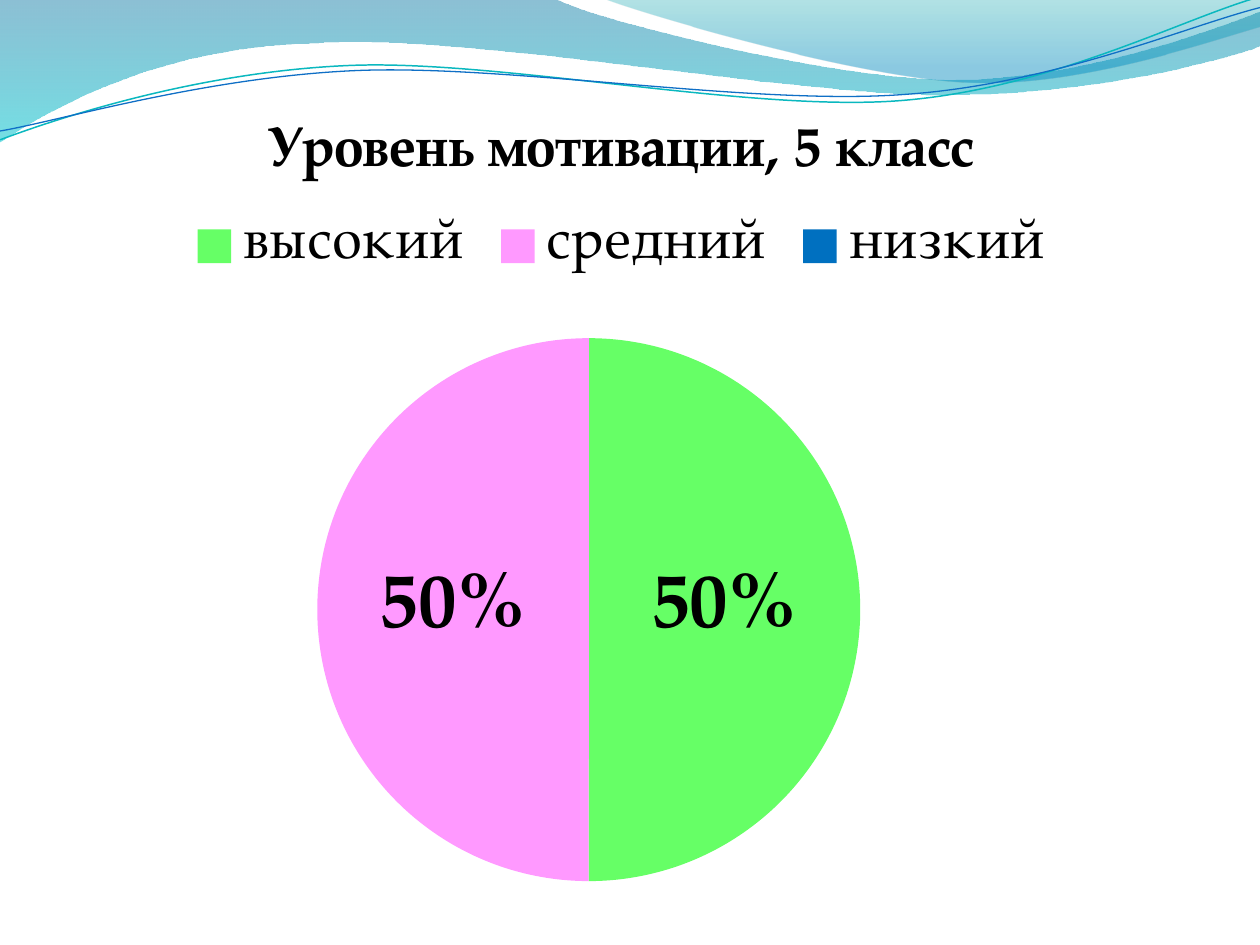
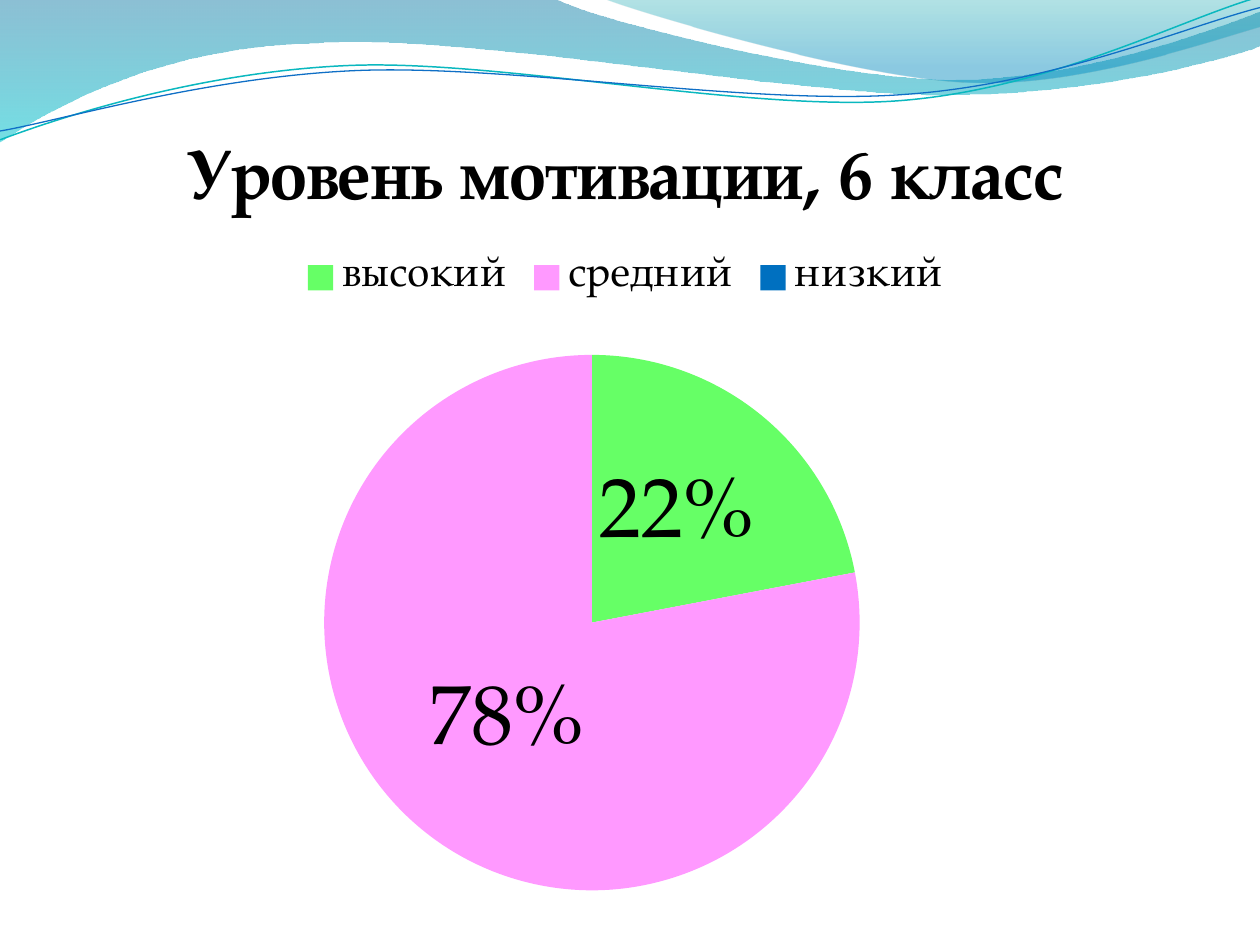
import math

from lxml import etree
from pptx import Presentation
from pptx import util as u
from pptx.chart.data import CategoryChartData
from pptx.dml.color import RGBColor
from pptx.enum import chart as ch
from pptx.oxml.ns import qn

COLUMNS, ROWS = 10, 7.5
CELL = u.Inches(1)
FONT = "TeX Gyre Pagella"
BLACK = RGBColor(0x00, 0x00, 0x00)
GREEN = RGBColor(0x66, 0xFF, 0x66)
PINK = RGBColor(0xFF, 0x99, 0xFF)
BLUE = RGBColor(0x00, 0x70, 0xC0)
LEVELS = {"высокий": GREEN, "средний": PINK, "низкий": BLUE}
PLOT_AREA = {"x": 0.032, "y": 0.306, "w": 0.879, "h": 0.658}
TILT = -2.7
TILT_CENTRE = (4.99, 0.58)

# Bands: steps (one point: straight, three points: cubic curve), then
# gradient stops (position, colour, opacity in percent).
BANDS = [
    ([(0, 0), (4.4, -0.01),
      (4.76, 0.17, 6.64, 0.63, 7.58, 0.63), (8.53, 0.63, 9.58, 0.26, 10, 0.09),
      (10.01, 0.36),
      (9.83, 0.44, 8.7, 0.76, 7.46, 0.75), (6.22, 0.75, 3.82, 0.28, 2.57, 0.34),
      (1.29, 0.36, 0.46, 0.83, -0.01, 1.13), (0, 0)],
     [(0, RGBColor(0x00, 0x74, 0xA1), 45), (1, RGBColor(0x00, 0xC6, 0xCF), 55)]),
    ([(4.79, -0.01),
      (5.09, 0.11, 6.82, 0.62, 7.69, 0.65), (8.56, 0.69, 9.61, 0.32, 10, 0.21),
      (10, 0), (4.79, -0.01)],
     [(0, RGBColor(0x00, 0xA1, 0xA9), 30), (0.8, RGBColor(0x00, 0x8B, 0xBF), 45)]),
]
# Lines: steps, colour, width.
WAVE_LINES = [
    ([(0, 1.11), (0.48, 0.93, 1.58, 0.57, 2.77, 0.52),
      (3.95, 0.47, 5.93, 0.89, 7.13, 0.8), (8.33, 0.71, 9.38, 0.15, 9.98, -0.02)],
     RGBColor(0x0A, 0xB8, 0xBF), 0.85),
    ([(0, 1.04), (0.47, 0.96, 1.64, 0.61, 2.83, 0.56),
      (4.03, 0.51, 5.97, 0.84, 7.17, 0.75), (8.36, 0.67, 9.41, 0.21, 10, 0.06)],
     RGBColor(0x0F, 0x6F, 0xC6), 0.75),
]


def cells(number):
    return round(number * CELL)


def pairs(step):
    return list(zip(step[::2], step[1::2]))


def level(step):
    """Turn a step's points back by the tilt, about its centre."""
    sine, cosine = math.sin(math.radians(-TILT)), math.cos(math.radians(-TILT))
    middle_x, middle_y = TILT_CENTRE
    turned = []
    for x, y in pairs(step):
        dx, dy = x - middle_x, y - middle_y
        turned += [middle_x + dx * cosine - dy * sine, middle_y + dx * sine + dy * cosine]
    return turned


def add_wave(page, steps, closed):
    """Build the outline through the steps' ends, then bend its cubic steps."""
    ends = [(cells(step[-2]), cells(step[-1])) for step in steps]
    builder = page.shapes.build_freeform(*ends[0])
    builder.add_line_segments(ends[1:], close=closed)
    wave = builder.convert_to_shape()
    wave.shadow.inherit = False
    segments = list(wave.element.iter(qn("a:lnTo")))
    for segment, step in zip(segments, steps[1:]):
        if len(step) == 2:
            continue
        curve = etree.Element(qn("a:cubicBezTo"))
        for x, y in pairs(step):
            etree.SubElement(curve, qn("a:pt"), x=str(cells(x) - wave.left),
                             y=str(cells(y) - wave.top))
        segment.getparent().replace(segment, curve)
    return wave


def add_band(page, steps, stops):
    band = add_wave(page, steps, closed=True)
    band.line.fill.background()
    band.fill.gradient()
    band.fill.gradient_angle = 270
    for stop, (position, colour, _) in zip(band.fill.gradient_stops, stops):
        stop.position = position
        stop.color.rgb = colour
    gradient = band.element.spPr.find(qn("a:gradFill"))
    for colour, (_, _, opacity) in zip(gradient.iter(qn("a:srgbClr")), stops):
        etree.SubElement(colour, qn("a:alpha"), val=str(opacity * 1000))


def add_wave_line(page, steps, colour, width):
    wave = add_wave(page, [level(step) for step in steps], closed=False)
    wave.rotation = TILT
    wave.fill.background()
    wave.line.color.rgb = colour
    wave.line.width = u.Pt(width)


def add_waves_to_master(deck, page):
    """Draw the waves on a page, then move them to the master for all pages."""
    for band in BANDS:
        add_band(page, *band)
    for wave_line in WAVE_LINES:
        add_wave_line(page, *wave_line)
    tree = deck.slide_master.element.cSld.spTree
    for index, wave in enumerate(list(page.shapes)):
        wave.element.nvSpPr.cNvPr.set("id", str(100 + index))
        tree.insert(2 + index, wave.element)


def style_font(font, size, bold=False):
    font.name = FONT
    font.size = u.Pt(size)
    font.bold = bold
    font.color.rgb = BLACK


def fix_plot_area(chart):
    """Hold the inner plot area at its shares of the chart's size."""
    area = chart.element.find(".//" + qn("c:plotArea"))
    for layout in area.findall(qn("c:layout")):
        area.remove(layout)
    layout = etree.Element(qn("c:layout"))
    area.insert(0, layout)
    manual = etree.SubElement(layout, qn("c:manualLayout"))
    settings = {"layoutTarget": "inner", "xMode": "edge", "yMode": "edge", **PLOT_AREA}
    for name, value in settings.items():
        etree.SubElement(manual, qn("c:" + name), val=str(value))


def add_level_pie(page, place, title, shares, title_size, legend_size, label_size, label_bold):
    data = CategoryChartData()
    data.categories = list(LEVELS)
    data.add_series("Series 1", shares)
    chart = page.shapes.add_chart(ch.XL_CHART_TYPE.PIE, *map(cells, place), data).chart
    style_font(chart.font, 10)

    chart.has_title = True
    heading = chart.chart_title.text_frame
    heading.text = title
    style_font(heading.paragraphs[0].font, title_size, bold=True)
    chart.chart_title.include_in_layout = False

    chart.has_legend = True
    chart.legend.position = ch.XL_LEGEND_POSITION.TOP
    chart.legend.include_in_layout = False
    style_font(chart.legend.font, legend_size)

    plot = chart.plots[0]
    plot.vary_by_categories = True
    for index, colour in enumerate(LEVELS.values()):
        fill = plot.series[0].points[index].format.fill
        fill.solid()
        fill.fore_color.rgb = colour
    labels = plot.series[0].data_labels
    labels.show_percentage = True
    labels.show_value = False
    labels.number_format = "0%;;;"  # zero shares stay unlabelled
    labels.number_format_is_linked = False
    labels.position = ch.XL_LABEL_POSITION.CENTER
    style_font(labels.font, label_size, label_bold)
    fix_plot_area(chart)


def main():
    deck = Presentation()
    deck.slide_width, deck.slide_height = cells(COLUMNS), cells(ROWS)
    blank = deck.slide_layouts[6]
    fifth, sixth = [deck.slides.add_slide(blank) for _ in range(2)]
    add_waves_to_master(deck, fifth)
    add_level_pie(fifth, (0.43, 0.68, 9, 6.55), "Уровень мотивации, 5 класс",
                  (50, 50, 0), title_size=32, legend_size=32, label_size=44, label_bold=True)
    add_level_pie(sixth, (0.28, 0.84, 9.37, 6.46), "Уровень мотивации, 6 класс",
                  (22, 78, 0), title_size=40, legend_size=24, label_size=48, label_bold=False)
    deck.save("out.pptx")


if __name__ == "__main__":
    main()
